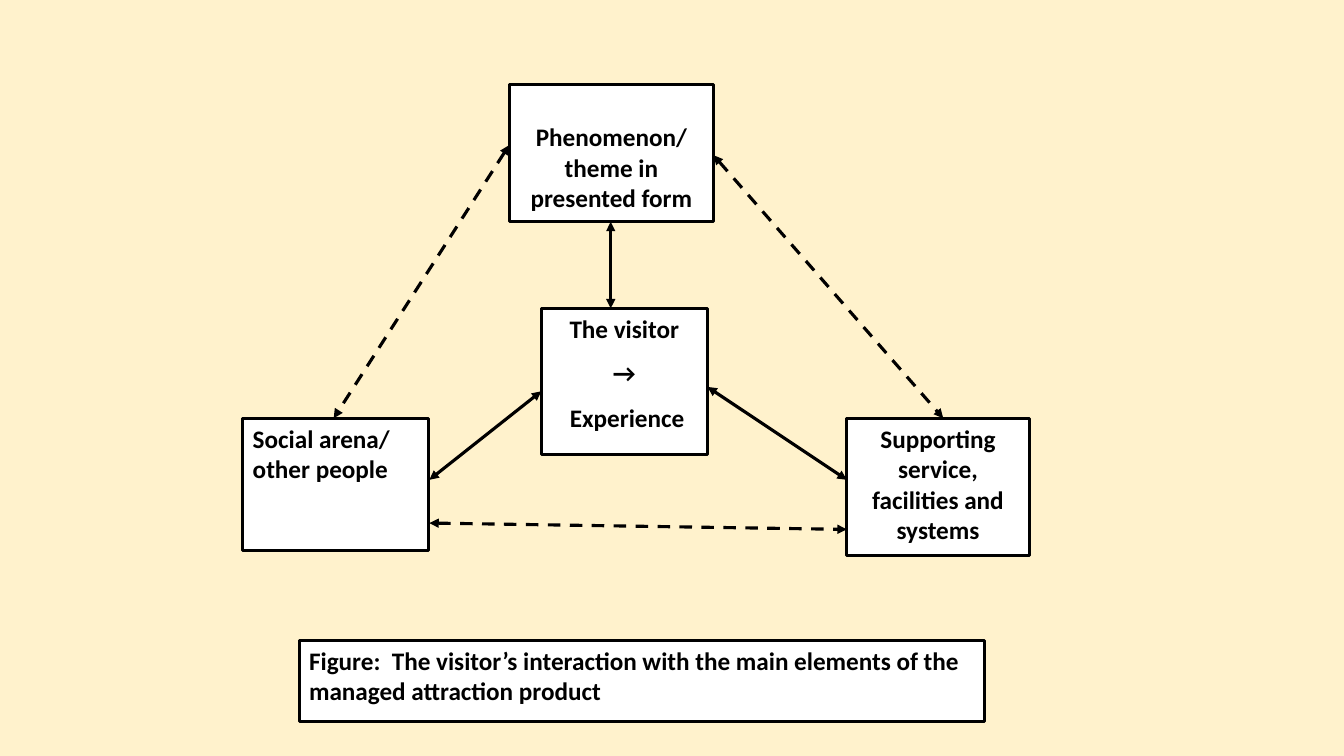
"""Draw the visitor and the main elements of the managed attraction product."""
import pptx
import pptx.util
import pptx.dml.color
import pptx.enum.dml
import pptx.enum.shapes
import pptx.enum.text
import pptx.oxml.ns
import lxml.etree

Cm = pptx.util.Cm
Pt = pptx.util.Pt
qn = pptx.oxml.ns.qn
LEFT = pptx.enum.text.PP_ALIGN.LEFT
MID = pptx.enum.text.PP_ALIGN.CENTER


def paint(color, code):
    color.rgb = pptx.dml.color.RGBColor.from_string(code)


deck = pptx.Presentation()
deck.slide_width = Cm(33.87)
deck.slide_height = Cm(19.05)
slide = deck.slides.add_slide(deck.slide_layouts[6])
slide.background.fill.solid()
paint(slide.background.fill.fore_color, "FFF2CC")

boxes = [
    (7.54, 16.13, 17.27, 2.06, LEFT, 0.13,
     ["Figure:  The visitor’s interaction with the main elements of the managed attraction product"]),
    (12.83, 2.13, 5.16, 3.45, MID, 0.94, ["Phenomenon/ theme in presented form"]),
    (21.34, 10.54, 4.6, 3.45, MID, 0.13, ["Supporting service, facilities and systems"]),
    (13.64, 7.77, 4.19, 3.68, MID, 0.13, ["The visitor", "→", " Experience"]),
    (6.12, 10.54, 4.67, 3.33, LEFT, 0.13, ["Social arena/ other people"]),
]
for left, top, width, height, align, inset, lines in boxes:
    box = slide.shapes.add_shape(
        pptx.enum.shapes.MSO_SHAPE.RECTANGLE, Cm(left), Cm(top), Cm(width), Cm(height))
    box.shadow.inherit = False
    box.fill.solid()
    paint(box.fill.fore_color, "FFFFFF")
    paint(box.line.color, "000000")
    box.line.width = Pt(2.25)
    frame = box.text_frame
    frame.word_wrap = True
    frame.vertical_anchor = pptx.enum.text.MSO_ANCHOR.TOP
    frame.margin_top = Cm(inset)
    frame.text = "\n".join(lines)
    for para in frame.paragraphs:
        para.alignment = align
        para.space_after = Pt(10)
        para.font.name = "Calibri"
        para.font.size = Pt(18)
        para.font.bold = True
        paint(para.font.color, "000000")

arrows = [
    (15.39, 7.77, 15.39, 5.59, False),
    (13.64, 9.86, 10.82, 12.09, False),
    (21.34, 12.09, 17.83, 9.75, False),
    (12.83, 3.66, 8.41, 10.54, True),
    (17.98, 3.91, 23.77, 10.54, True),
    (10.82, 13.18, 21.34, 13.34, True),
]
for left, top, right, bottom, dashed in arrows:
    arrow = slide.shapes.add_connector(
        pptx.enum.shapes.MSO_CONNECTOR.STRAIGHT, Cm(left), Cm(top), Cm(right), Cm(bottom))
    paint(arrow.line.color, "000000")
    arrow.line.width = Pt(2.25)
    if dashed:
        arrow.line.dash_style = pptx.enum.dml.MSO_LINE.DASH
    props = arrow.line.fill and arrow.element.find(qn("p:spPr"))
    stroke = props.find(qn("a:ln"))
    for end in ("a:headEnd", "a:tailEnd"):
        lxml.etree.SubElement(stroke, qn(end), type="triangle")
    lxml.etree.SubElement(props, qn("a:effectLst"))

deck.save("out.pptx")
